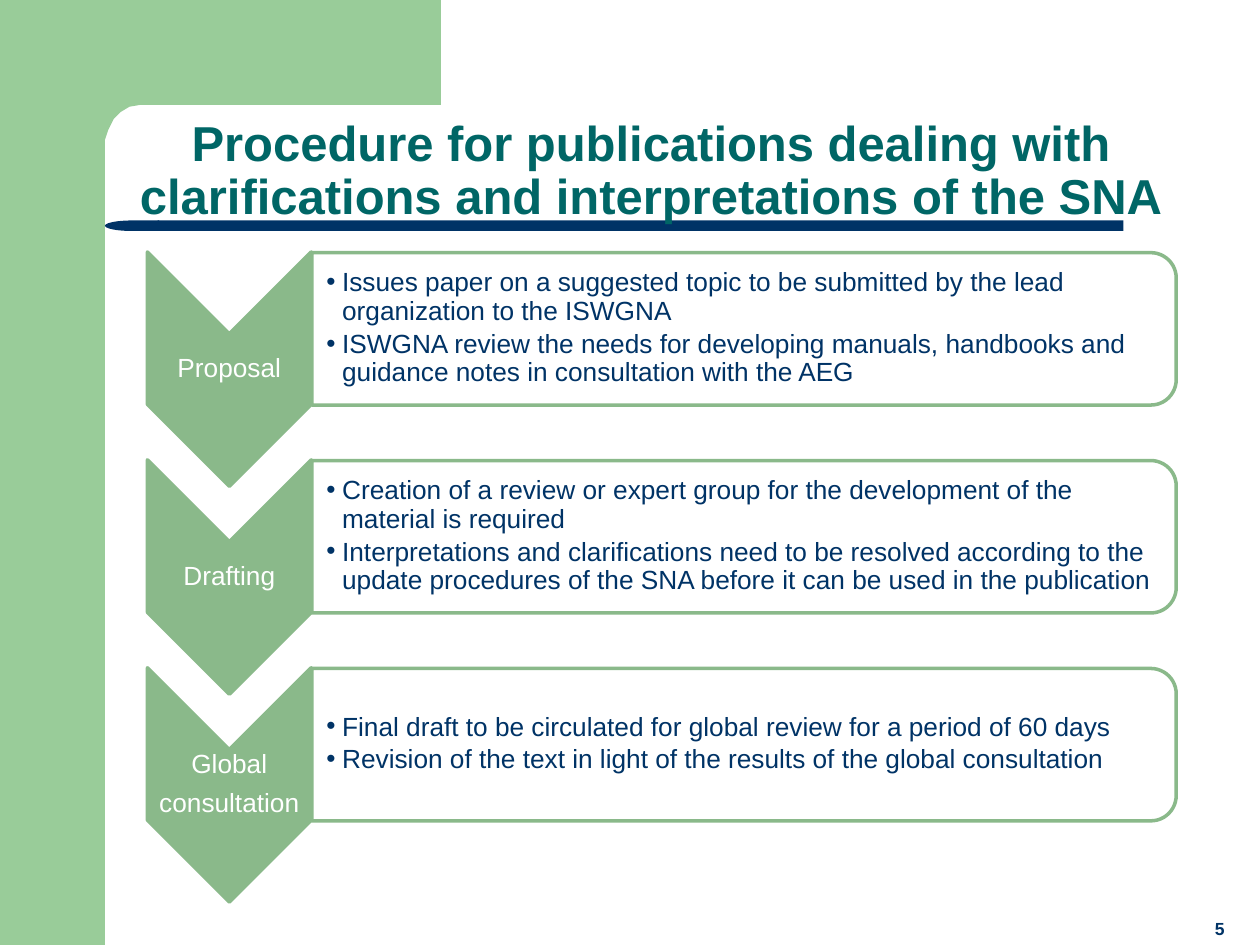
"""Build a slide showing the three-step procedure for SNA publications."""
from lxml import etree
from pptx import Presentation
from pptx.dml.color import RGBColor
from pptx.enum import shapes, text
from pptx.oxml import ns
from pptx.util import Pt

GREEN, SAGE, NAVY, TEAL, WHITE = "99CC99", "8AB98A", "003366", "006666", "FFFFFF"
KIND = shapes.MSO_SHAPE
ANCHOR = text.MSO_ANCHOR
CENTER = text.PP_ALIGN.CENTER


def rgb(value):
    return RGBColor.from_string(value)


class ProcedureSlide:
    def __init__(self, slide, font="Arial"):
        self.slide = slide
        self.font = font

    def paint(self, shape, fill, line=None):
        shape.shadow.inherit = False
        shape.fill.solid()
        shape.fill.fore_color.rgb = rgb(fill)
        if line:
            shape.line.color.rgb = rgb(line)
            shape.line.width = Pt(2)
        else:
            shape.line.fill.background()
        return shape

    def shape(self, kind, box, fill, line=None, rotation=0):
        part = self.slide.shapes.add_shape(kind, *map(Pt, box))
        part.rotation = rotation
        return self.paint(part, fill, line)

    def corner(self, start, points, fill):
        builder = self.slide.shapes.build_freeform(*start, scale=Pt(1))
        builder.add_line_segments(points, close=True)
        return self.paint(builder.convert_to_shape(), fill)

    def style_text(self, holder, content, size, color, bold=False, anchor=ANCHOR.MIDDLE,
                   align=CENTER, spacing=0.9, after=0, insets=None):
        frame = holder.text_frame
        frame.text = content
        frame.word_wrap = True
        frame.auto_size = text.MSO_AUTO_SIZE.NONE
        frame.vertical_anchor = anchor
        if insets:
            (frame.margin_left, frame.margin_top,
             frame.margin_right, frame.margin_bottom) = map(Pt, insets)
        for paragraph in frame.paragraphs:
            paragraph.alignment = align
            paragraph.line_spacing = spacing
            paragraph.space_before = Pt(0)
            paragraph.space_after = Pt(after)
            for run in paragraph.runs:
                run.font.name = self.font
                run.font.size = Pt(size)
                run.font.bold = bold
                run.font.color.rgb = rgb(color)

    def label(self, box, content, size, color, **style):
        holder = self.slide.shapes.add_textbox(*map(Pt, box))
        self.style_text(holder, content, size, color, **style)

    def placeholder(self, holder, box, content, size, color, **style):
        holder.left, holder.top, holder.width, holder.height = map(Pt, box)
        self.slide.shapes.element.append(holder.element)
        self.style_text(holder, content, size, color, **style)

    def bullets(self, holder, box, items):
        self.placeholder(holder, box, "\n".join(items), 15, NAVY, after=2.6,
                         align=text.PP_ALIGN.LEFT, insets=(8.64, 0.72, 0.72, 0.72))
        for paragraph in holder.text_frame.paragraphs:
            properties = paragraph._p.get_or_add_pPr()
            properties.set("marL", str(Pt(9)))
            properties.set("indent", str(-Pt(9)))
            etree.SubElement(properties, ns.qn("a:buChar"), char="•")

    def step(self, holder, offset, name, items):
        self.shape(KIND.CHEVRON, (64.08, 164.16 + offset, 133.92, 93.6), SAGE, SAGE, 90)
        self.label((84.24, 190.8 + offset, 93.6, 40.32), name, 15, WHITE,
                   after=6, insets=(0.72,) * 4)
        panel = self.shape(KIND.ROUND_2_SAME_RECTANGLE,
                           (381.6, offset - 59.04, 87.12, 493.92), WHITE, SAGE, 90)
        tint = panel.element.spPr.find(".//" + ns.qn("a:srgbClr"))
        etree.SubElement(tint, ns.qn("a:alpha"), val="90000")
        self.bullets(holder, (177.84, 148.32 + offset, 489.6, 78.48), items)


STEPS = [
    ("Proposal", [
        "Issues paper on a suggested topic to be submitted by the lead organization to the ISWGNA",
        "ISWGNA review the needs for developing manuals, handbooks and guidance notes "
        "in consultation with the AEG"]),
    ("Drafting", [
        "Creation of a review or expert group for the development of the material is required",
        "Interpretations and clarifications need to be resolved according to the update "
        "procedures of the SNA before it can be used in the publication"]),
    ("Global\nconsultation", [
        "Final draft to be circulated for global review for a period of 60 days",
        "Revision of the text in light of the results of the global consultation"]),
]


def main():
    deck = Presentation()
    deck.slide_width, deck.slide_height = Pt(720), Pt(540)
    slide = deck.slides.add_slide(deck.slide_layouts.get_by_name("Comparison"))
    title, *lists, spare = slide.placeholders
    spare.element.getparent().remove(spare.element)
    page = ProcedureSlide(slide)

    page.shape(KIND.RECTANGLE, (0, 0, 60, 540), GREEN)
    page.corner((252, 0), [(252, 60), (80, 60), (74, 61), (69, 64), (65, 68), (62, 74),
                           (60.5, 80), (60, 85), (60, 92), (36, 92), (36, 0)], GREEN)
    page.shape(KIND.RECTANGLE, (90, 126, 552, 6), NAVY)
    cap = page.shape(KIND.FLOWCHART_DELAY, (60, 126, 31, 6), NAVY)
    cap.element.spPr.find(ns.qn("a:xfrm")).set("flipH", "1")

    page.placeholder(title, (60, 54, 624, 78),
                     "Procedure for publications dealing with clarifications "
                     "and interpretations of the SNA",
                     28, TEAL, bold=True, anchor=ANCHOR.BOTTOM)
    page.label((673.92, 516.24, 46.08, 23.76), "5", 10, NAVY,
               bold=True, anchor=ANCHOR.BOTTOM, spacing=1.0)
    for index, (holder, (name, items)) in enumerate(zip(lists, STEPS)):
        page.step(holder, index * 118.8, name, items)
    deck.save("out.pptx")


if __name__ == "__main__":
    main()
